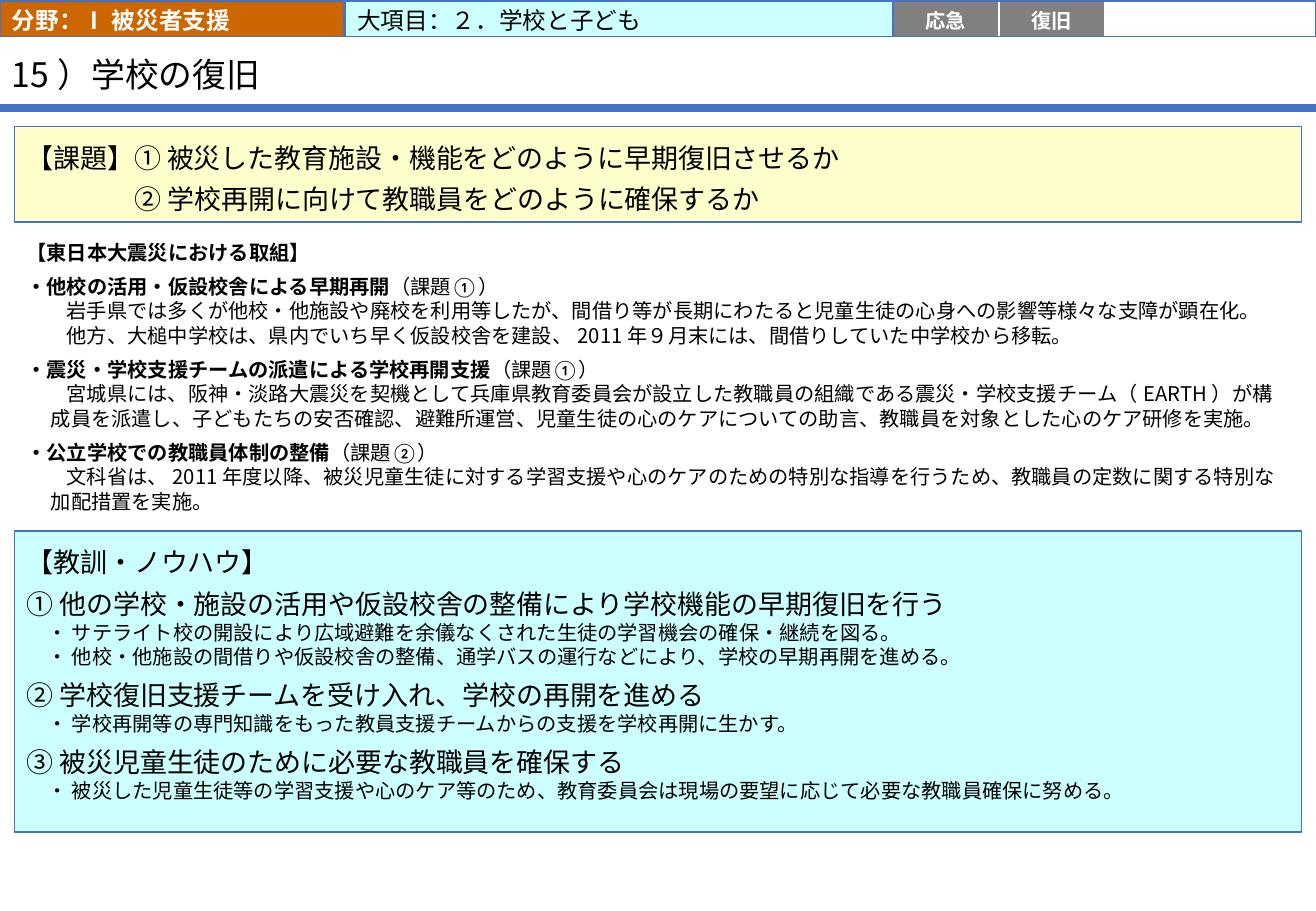
from dataclasses import dataclass
from typing import Optional

from lxml.etree import SubElement
from pptx import Presentation
from pptx.dml.color import RGBColor as Rgb
from pptx.enum.shapes import MSO_CONNECTOR as Conn, MSO_SHAPE as Form
from pptx.enum.text import MSO_ANCHOR as Anchor, PP_ALIGN as Align
from pptx.oxml.ns import qn
from pptx.util import Inches, Pt

COLORS = {
    "blue": "4472C4",
    "orange": "CC6600",
    "cyan": "CCFFFF",
    "yellow": "FFFFCC",
    "gray": "808080",
    "white": "FFFFFF",
    "black": "000000",
}
LATIN = "Calibri"
NOTO = "Noto Sans CJK JP"


@dataclass(frozen=True)
class Para:
    text: str
    size: int = 12
    font: str = NOTO
    bold: bool = False
    tail: str = ""
    color: str = "black"
    before: int = 0
    left: float = 0
    first: float = 0
    lead: Optional[float] = None
    align: Align = Align.LEFT


@dataclass(frozen=True)
class Box:
    left: float
    top: float
    width: float
    height: float
    paras: tuple[Para, ...] = ()
    fill: Optional[str] = None
    line: Optional[str] = None
    inset: tuple[float, float, float, float] = (0.1, 0.05, 0.1, 0.05)
    anchor: Anchor = Anchor.MIDDLE


def tint(name: str) -> Rgb:
    return Rgb.from_string(COLORS[name])


def style(run, para: Para, bold: bool) -> None:
    font = run.font
    font.size = Pt(para.size)
    font.name = para.font
    font.bold = bold
    font.color.rgb = tint(para.color)
    SubElement(run._r.get_or_add_rPr(), qn("a:ea")).set("typeface", para.font)


def write(frame, box: Box) -> None:
    frame.word_wrap = True
    frame.vertical_anchor = box.anchor
    (frame.margin_left, frame.margin_top,
     frame.margin_right, frame.margin_bottom) = map(Inches, box.inset)
    frame.text = "\n".join(para.text for para in box.paras)
    for item, para in zip(frame.paragraphs, box.paras):
        item.alignment = para.align
        item.space_before = Pt(para.before)
        if para.lead:
            item.line_spacing = Pt(para.lead) if para.lead > 3 else para.lead
        props = item._p.get_or_add_pPr()
        props.set("marL", str(Inches(para.left)))
        props.set("indent", str(Inches(para.first)))
        style(item.runs[0], para, para.bold)
        if para.tail:
            run = item.add_run()
            run.text = para.tail
            style(run, para, False)


def draw(slide, box: Box) -> None:
    place = map(Inches, (box.left, box.top, box.width, box.height))
    shape = slide.shapes.add_shape(Form.RECTANGLE, *place)
    shape.shadow.inherit = False
    if box.fill:
        shape.fill.solid()
        shape.fill.fore_color.rgb = tint(box.fill)
    else:
        shape.fill.background()
    if box.line:
        shape.line.color.rgb = tint(box.line)
        shape.line.width = Pt(1)
    else:
        shape.line.fill.background()
    if box.paras:
        write(shape.text_frame, box)


def rule(slide, top: float, width: float) -> None:
    line = slide.shapes.add_connector(
        Conn.STRAIGHT, 0, Inches(top), Inches(width), Inches(top))
    line.line.color.rgb = tint("blue")
    line.line.width = Pt(4.5)
    SubElement(line._element.spPr, qn("a:effectLst"))


def head(text: str, tail: str = "") -> Para:
    return Para(text, font=LATIN, bold=True, tail=tail, before=6 if tail else 0)


def body(text: str) -> Para:
    return Para(text, left=0.2, first=0.13)


def lesson(text: str, before: int = 6) -> Para:
    return Para(text, size=16, before=before)


def point(text: str) -> Para:
    return Para("・ " + text, left=0.41, first=-0.24)


WIDTH = 10.83
EDGE, SPAN = 0.12, 10.59
TOP, TALL = 0.01, 0.29
STAGE, STEP = 7.35, 0.87
STRIP = (0.1, 0.02, 0.1, 0)

EFFORTS = (
    head("【東日本大震災における取組】"),
    head("・他校の活用・仮設校舎による早期再開", "（課題①）"),
    body("岩手県では多くが他校・他施設や廃校を利用等したが、間借り等が長期にわたると児童生徒の心身への影響等様々な支障が顕在化。"),
    body("他方、大槌中学校は、県内でいち早く仮設校舎を建設、2011年９月末には、間借りしていた中学校から移転。"),
    head("・震災・学校支援チームの派遣による学校再開支援", "（課題①）"),
    body("宮城県には、阪神・淡路大震災を契機として兵庫県教育委員会が設立した教職員の組織である震災・学校支援チーム（EARTH）が構成員を派遣し、"
         "子どもたちの安否確認、避難所運営、児童生徒の心のケアについての助言、教職員を対象とした心のケア研修を実施。"),
    head("・公立学校での教職員体制の整備", "（課題②）"),
    body("文科省は、2011年度以降、被災児童生徒に対する学習支援や心のケアのための特別な指導を行うため、教職員の定数に関する特別な加配措置を実施。"),
)
ISSUES = (
    Para("【課題】① 被災した教育施設・機能をどのように早期復旧させるか", size=16, lead=24),
    Para("② 学校再開に向けて教職員をどのように確保するか", size=16, lead=24, left=0.89),
)
LESSONS = (
    lesson("【教訓・ノウハウ】", 0),
    lesson("① 他の学校・施設の活用や仮設校舎の整備により学校機能の早期復旧を行う"),
    point("サテライト校の開設により広域避難を余儀なくされた生徒の学習機会の確保・継続を図る。"),
    point("他校・他施設の間借りや仮設校舎の整備、通学バスの運行などにより、学校の早期再開を進める。"),
    lesson("② 学校復旧支援チームを受け入れ、学校の再開を進める"),
    point("学校再開等の専門知識をもった教員支援チームからの支援を学校再開に生かす。"),
    lesson("③ 被災児童生徒のために必要な教職員を確保する"),
    point("被災した児童生徒等の学習支援や心のケア等のため、教育委員会は現場の要望に応じて必要な教職員確保に努める。"),
)
FIELD = Para("分野：Ⅰ 被災者支援", size=14, font=LATIN, bold=True, color="white")
TOPIC = Para("大項目：２．学校と子ども", size=14, font=LATIN)
TITLE = Para("15）学校の復旧", size=20, lead=0.9)

PANELS = (
    Box(EDGE, 1.89, SPAN, 2.42, EFFORTS, "white"),
    Box(0, TOP, 2.83, TALL, (FIELD,), "orange", "blue", STRIP),
    Box(2.84, TOP, 4.53, TALL, (TOPIC,), "cyan", "blue", STRIP),
    Box(EDGE, 1.04, SPAN, 0.79, ISSUES, "yellow", "blue", (0.1, 0.12, 0.1, 0.12)),
    Box(EDGE, 4.37, SPAN, 2.48, LESSONS, "cyan", "blue", (0.1, 0.12, 0.1, 0), Anchor.TOP),
)


def stages() -> list[Box]:
    boxes = []
    for col, name in enumerate(("応急", "復旧", "", "")):
        label = Para(name, font=LATIN, bold=True, color="white", align=Align.CENTER)
        boxes.append(Box(STAGE + col * STEP, TOP, STEP, TALL,
                         (label,) if name else (), "gray" if name else "white",
                         "white", (0, 0.02, 0, 0)))
    return boxes + [Box(STAGE, TOP, 4 * STEP, TALL, line="blue")]


def main() -> None:
    deck = Presentation()
    deck.slide_width, deck.slide_height = Inches(WIDTH), Inches(7.5)
    slide = deck.slides.add_slide(deck.slide_layouts[6])
    rule(slide, 0.89, WIDTH)
    title = Box(0, 0.32, 9.48, 0.58, (TITLE,), inset=(0.1, 0.04, 0.1, 0))
    area = map(Inches, (title.left, title.top, title.width, title.height))
    write(slide.shapes.add_textbox(*area).text_frame, title)
    for box in (*PANELS, *stages()):
        draw(slide, box)
    deck.save("out.pptx")


if __name__ == "__main__":
    main()
